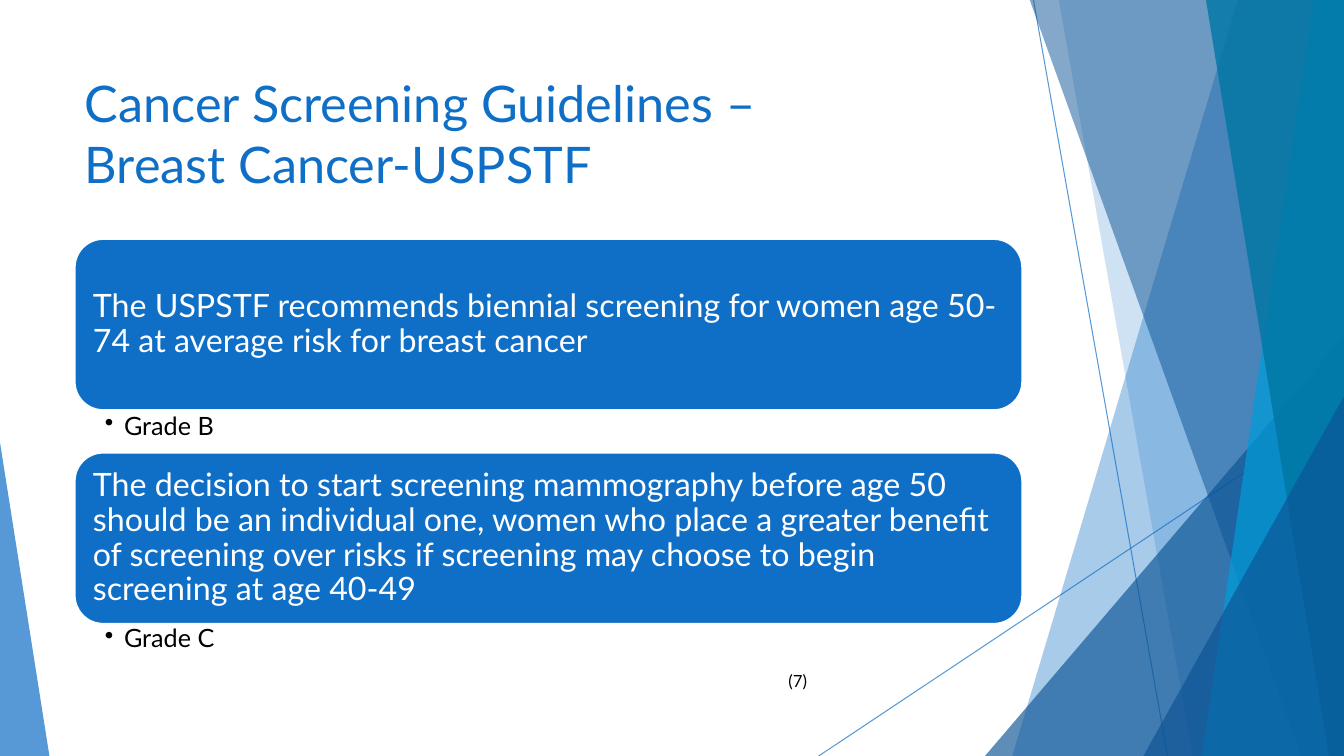
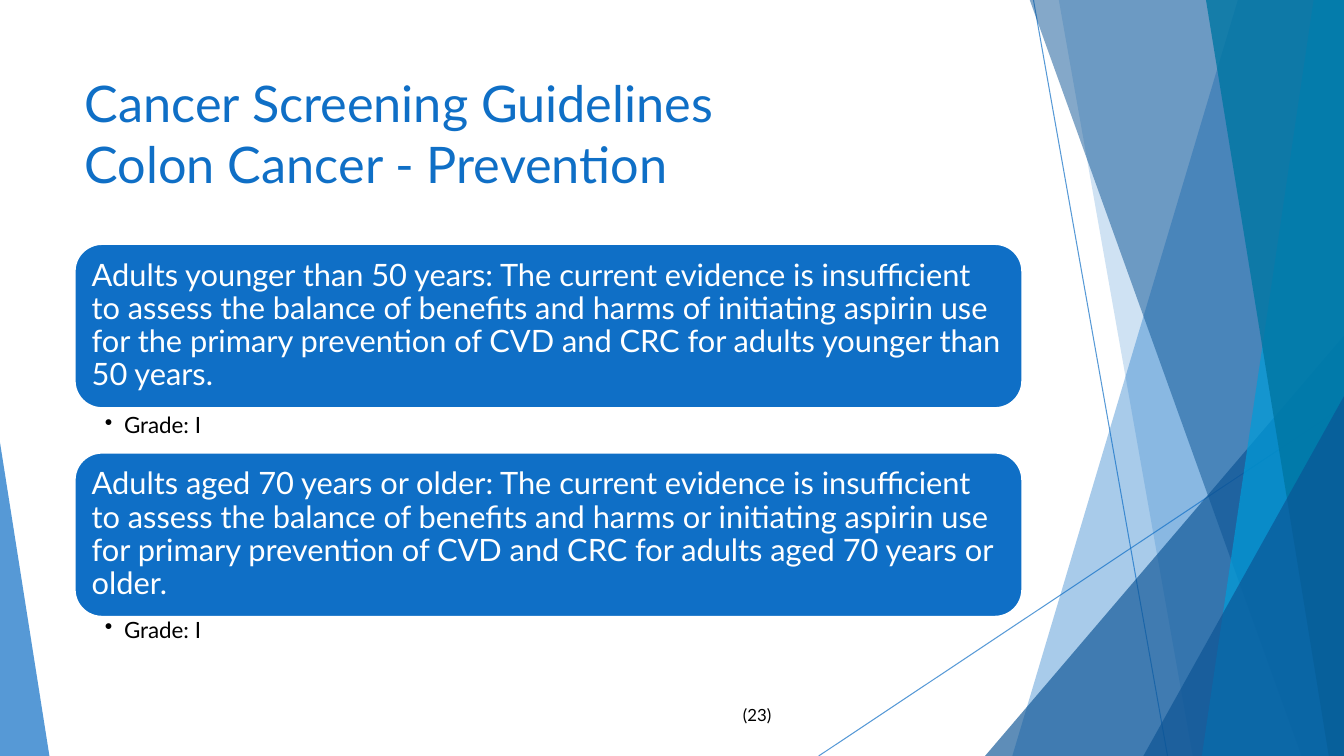
from copy import deepcopy

from lxml.etree import SubElement
from pptx import Presentation
from pptx.dml.color import RGBColor
from pptx.enum.shapes import MSO_CONNECTOR as Link, MSO_SHAPE as Kind
from pptx.enum.text import MSO_ANCHOR as Anchor, MSO_AUTO_SIZE as Fit, PP_ALIGN as Align
from pptx.oxml.ns import qn
from pptx.util import Pt

PX = 9144
WIDE, HIGH = 1333, 750
LEFT, SPAN = 74, 940
FONT = "Lato"
BLUE, NAVY, CYAN, TEAL = "0F6FC6", "0B5394", "009DD9", "0076A3"
WHITE, BLACK = "FFFFFF", "000000"

LINES = [(1025, 0, 1158, 750), (1333, 403, 812, 750)]
BANDS = [
    ("band", (1228, 1004), BLUE, 36),
    ("band", (1050, 1183), BLUE, 20),
    ("peak", (977, 333, 356, 1), NAVY, 66),
    ("band", (1021, 1291), NAVY, 50),
    ("band", (1303, 1192), CYAN, 70),
    ("band", (1196, 1318), TEAL, 80),
    ("peak", (1134, 393, 199, 1), NAVY, 66),
    ("peak", (0, 439, 49, 0), BLUE, 70),
]

SLIDES = [
    {
        "title": "Cancer Screening Guidelines –\nBreast Cancer-USPSTF",
        "card": {"high": 170, "size": 23, "pad": 10},
        "tag": {"high": 42, "size": 18, "pad": (30, 3, 18, 3)},
        "rows": [
            (237, 407, "The USPSTF recommends biennial screening for women age 50-74 "
             "at average risk for breast cancer", "Grade B"),
            (449, 618, "The decision to start screening mammography before age 50 "
             "should be an individual one, women who place a greater benefit of "
             "screening over risks if screening may choose to begin screening at "
             "age 40-49", "Grade C"),
        ],
        "note": ("(7)", 772, 661, 62),
    },
    {
        "title": "Cancer Screening Guidelines\nColon Cancer - Prevention",
        "card": {"high": 163, "size": 22, "pad": 9},
        "tag": {"high": 40, "size": 16, "pad": (30, 2, 12, 2)},
        "rows": [
            (242, 409, "Adults younger than 50 years: The current evidence is "
             "insufficient to assess the balance of benefits and harms of "
             "initiating aspirin use for the primary prevention of CVD and CRC "
             "for adults younger than 50 years.", "Grade: I"),
            (449, 612, "Adults aged 70 years or older: The current evidence is "
             "insufficient to assess the balance of benefits and harms or "
             "initiating aspirin use for primary prevention of CVD and CRC for "
             "adults aged 70 years or older.", "Grade: I"),
        ],
        "note": ("(23)", 727, 694, 73),
    },
]


def px(*nums):
    return [num * PX for num in nums]


def paint(fill, tint):
    fill.solid()
    fill.fore_color.rgb = RGBColor.from_string(tint)


def fade(shape, part):
    for node in shape.element.iter(qn("a:srgbClr")):
        SubElement(node, qn("a:alpha"), val=str(part * 1000))


def write(shape, text, size, tint=BLACK, pad=(10, 5, 10, 5), anchor=Anchor.TOP,
          space=1.0, dot=False):
    frame = shape.text_frame
    frame.word_wrap = True
    frame.auto_size = Fit.NONE
    frame.vertical_anchor = anchor
    (frame.margin_left, frame.margin_top,
     frame.margin_right, frame.margin_bottom) = px(*pad)
    para = frame.paragraphs[0]
    para.text = text
    para.alignment = Align.LEFT
    para.line_spacing = space
    for run in para.runs:
        run.font.name = FONT
        run.font.size = Pt(size)
        run.font.color.rgb = RGBColor.from_string(tint)
    look = next(shape.element.iter(qn("a:rPr")))
    for gap in shape.element.iter(qn("a:br")):
        gap.insert(0, deepcopy(look))
    if dot:
        props = para.alignment is not None and next(shape.element.iter(qn("a:pPr")))
        props.set("marL", str(19 * PX))
        props.set("indent", str(-19 * PX))
        SubElement(props, qn("a:buChar"), char="•")


def line(shapes, ends):
    rule = shapes.add_connector(Link.STRAIGHT, *px(*ends))
    rule.line.width = Pt(0.75)
    paint(rule.line.fill, BLUE)
    fade(rule, 70)
    SubElement(rule.element.spPr, qn("a:effectLst"))


def band(shapes, top, foot):
    pen = shapes.build_freeform(top, -1, scale=PX)
    pen.add_line_segments([(WIDE, -1), (WIDE, HIGH), (foot, HIGH)], close=True)
    return pen.convert_to_shape()


def peak(shapes, left, top, wide, tip):
    shape = shapes.add_shape(Kind.ISOSCELES_TRIANGLE, *px(left, top, wide, HIGH - top))
    shape.adjustments[0] = tip
    return shape


def decorate(slide, layout):
    group = slide.shapes.add_group_shape()
    for ends in LINES:
        line(group.shapes, ends)
    draw = {"band": band, "peak": peak}
    for kind, spot, tint, part in BANDS:
        shape = draw[kind](group.shapes, *spot)
        shape.shadow.inherit = False
        shape.line.fill.background()
        paint(shape.fill, tint)
        fade(shape, part)
    tree = layout.shapes.element
    for spare in list(layout.placeholders)[1:]:
        tree.remove(spare.element)
    tree.insert(2, group.element)


def card(slide, top, text, high, size, pad):
    shape = slide.shapes.add_shape(Kind.ROUNDED_RECTANGLE, *px(LEFT, top, SPAN, high))
    shape.shadow.inherit = False
    paint(shape.fill, BLUE)
    paint(shape.line.fill, WHITE)
    shape.line.width = Pt(1.5)
    write(shape, text, size, tint=WHITE, pad=(pad,) * 4, anchor=Anchor.MIDDLE, space=0.9)


def tag(slide, top, text, high, size, pad):
    box = slide.shapes.add_textbox(*px(LEFT, top, SPAN, high))
    write(box, text, size, pad=pad, space=0.9, dot=True)


def fill_slide(slide, data):
    title = slide.shapes.title
    title.left, title.top, title.width, title.height = px(LEFT, 67, SPAN, 144)
    write(title, data["title"], 36, tint=BLUE)
    for top, low, text, grade in data["rows"]:
        card(slide, top, text, **data["card"])
        tag(slide, low, grade, **data["tag"])
    text, left, top, wide = data["note"]
    write(slide.shapes.add_textbox(*px(left, top, wide, 30)), text, 12)


def main():
    deck = Presentation()
    deck.slide_width, deck.slide_height = px(WIDE, HIGH)
    layout = deck.slide_layouts[5]
    slides = [deck.slides.add_slide(layout) for data in SLIDES]
    decorate(slides[0], layout)
    for slide, data in zip(slides, SLIDES):
        fill_slide(slide, data)
    deck.save("out.pptx")


if __name__ == "__main__":
    main()
